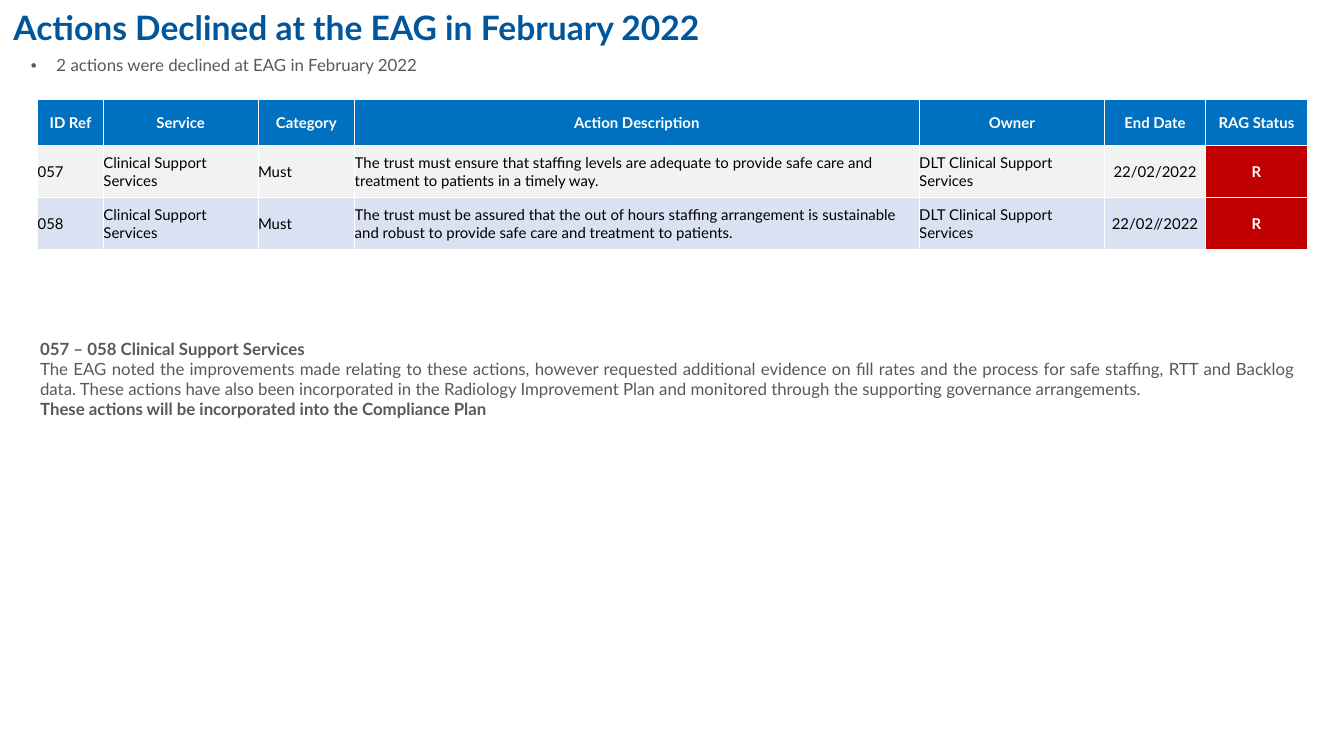
from typing import NamedTuple

from lxml.etree import SubElement
from pptx import Presentation
from pptx.dml.color import RGBColor
from pptx.enum.text import MSO_ANCHOR, MSO_AUTO_SIZE, PP_ALIGN
from pptx.oxml import parse_xml
from pptx.oxml.ns import nsdecls, qn
from pptx.util import Inches, Pt

FONT = "Lato"
BLUE, HEAD, RED = "00559B", "0070C0", "C00000"
GREY, WHITE, BLACK = "595959", "FFFFFF", "000000"


class Box(NamedTuple):
    left: float
    top: float
    width: float
    height: float


class Column(NamedTuple):
    label: str
    width: float
    align: PP_ALIGN


class Action(NamedTuple):
    ref: str
    service: str
    kind: str
    detail: str
    owner: str
    end: str
    rag: str


COLUMNS = [
    Column("ID Ref", 0.49, PP_ALIGN.LEFT),
    Column("Service", 1.15, PP_ALIGN.LEFT),
    Column("Category", 0.72, PP_ALIGN.LEFT),
    Column("Action Description", 4.2, PP_ALIGN.LEFT),
    Column("Owner", 1.38, PP_ALIGN.LEFT),
    Column("End Date", 0.75, PP_ALIGN.CENTER),
    Column("RAG Status", 0.76, PP_ALIGN.CENTER),
]
ACTIONS = [
    Action("057", "Clinical Support Services", "Must",
           "The trust must ensure that staffing levels are adequate to provide "
           "safe care and treatment to patients in a timely way.",
           "DLT Clinical Support Services", "22/02/2022", "R"),
    Action("058", "Clinical Support Services", "Must",
           "The trust must be assured that the out of hours staffing arrangement is "
           "sustainable and robust to provide safe care and treatment to patients.",
           "DLT Clinical Support Services", "22/02//2022", "R"),
]
BANDS = ["F2F2F2", "D9E1F2"]
ROWS = [0.34, 0.39, 0.39]
NOTES = [
    ("057 – 058 Clinical Support Services", True),
    ("The EAG noted the improvements made relating to these actions, however "
     "requested additional evidence on fill rates and the process for safe staffing, "
     "RTT and Backlog data. These actions have also been incorporated in the Radiology "
     "Improvement Plan and monitored through the supporting governance arrangements.",
     False),
    ("These actions will be incorporated into the Compliance Plan", True),
]


def color(code: str) -> RGBColor:
    return RGBColor.from_string(code)


def style(para, size: float, code: str, bold: bool, align: PP_ALIGN) -> None:
    para.alignment = align
    para.space_before = Pt(0)
    font = para.font
    font.name, font.size, font.bold = FONT, Pt(size), bold
    font.color.rgb = color(code)


def place(shape, box: Box) -> None:
    shape.left, shape.top, shape.width, shape.height = map(Inches, box)
    frame = shape.text_frame
    frame.word_wrap = True
    frame.auto_size = MSO_AUTO_SIZE.NONE
    frame.vertical_anchor = MSO_ANCHOR.TOP


def bullet(para) -> None:
    props = para._p.get_or_add_pPr()
    props.set("marL", str(Inches(0.19)))
    props.set("indent", str(-Inches(0.19)))
    SubElement(props, qn("a:buChar")).set("char", "•")


def fill_cell(cell, text: str, back: str, ink: str, bold: bool, align: PP_ALIGN) -> None:
    cell.margin_left = cell.margin_right = cell.margin_top = cell.margin_bottom = 0
    cell.vertical_anchor = MSO_ANCHOR.MIDDLE
    # Borders come before the fill in the cell properties
    for side in ("lnL", "lnR", "lnT", "lnB"):
        cell._tc.get_or_add_tcPr().append(parse_xml(
            f'<a:{side} {nsdecls("a")} w="{Pt(0.5)}"><a:solidFill>'
            f'<a:srgbClr val="{WHITE}"/></a:solidFill></a:{side}>'))
    cell.fill.solid()
    cell.fill.fore_color.rgb = color(back)
    cell.text = text
    style(cell.text_frame.paragraphs[0], 8, ink, bold, align)


def add_grid(slide, box: Box) -> None:
    table = slide.shapes.add_table(
        len(ROWS), len(COLUMNS), *map(Inches, box)).table
    for row, high in zip(table.rows, ROWS):
        row.height = Inches(high)
    for col, item in enumerate(COLUMNS):
        table.columns[col].width = Inches(item.width)
        fill_cell(table.cell(0, col), item.label, HEAD, WHITE, True, PP_ALIGN.CENTER)
        for row, (action, band) in enumerate(zip(ACTIONS, BANDS), 1):
            rag = item.label == "RAG Status"
            fill_cell(table.cell(row, col), action[col], RED if rag else band,
                      WHITE if rag else BLACK, rag, item.align)


def main() -> None:
    # Widescreen page, 16 to 9
    deck = Presentation()
    deck.slide_width = Inches(10)
    deck.slide_height = deck.slide_width * 9 // 16
    slide = deck.slides.add_slide(deck.slide_layouts[1])

    # Title and summary bullet
    title, body = slide.placeholders
    place(title, Box(0, 0, 10, 0.46))
    title.text_frame.text = "Actions Declined at the EAG in February 2022"
    style(title.text_frame.paragraphs[0], 18, BLUE, True, PP_ALIGN.LEFT)
    place(body, Box(0.13, 0.36, 9.6, 0.25))
    body.text_frame.text = "2 actions were declined at EAG in February 2022"
    point = body.text_frame.paragraphs[0]
    bullet(point)
    style(point, 9, GREY, False, PP_ALIGN.JUSTIFY)

    # Declined actions
    add_grid(slide, Box(0.28, 0.74, 9.45, sum(ROWS)))

    # Commentary
    box = Box(0.2, 2.47, 9.52, 1.04)
    note = slide.shapes.add_textbox(*map(Inches, box))
    place(note, box)
    frame = note.text_frame
    frame.text = "\n".join(text for text, _ in NOTES)
    for para, (_, bold) in zip(frame.paragraphs, NOTES):
        style(para, 9, GREY, bold, PP_ALIGN.JUSTIFY)

    deck.save("out.pptx")


if __name__ == "__main__":
    main()
